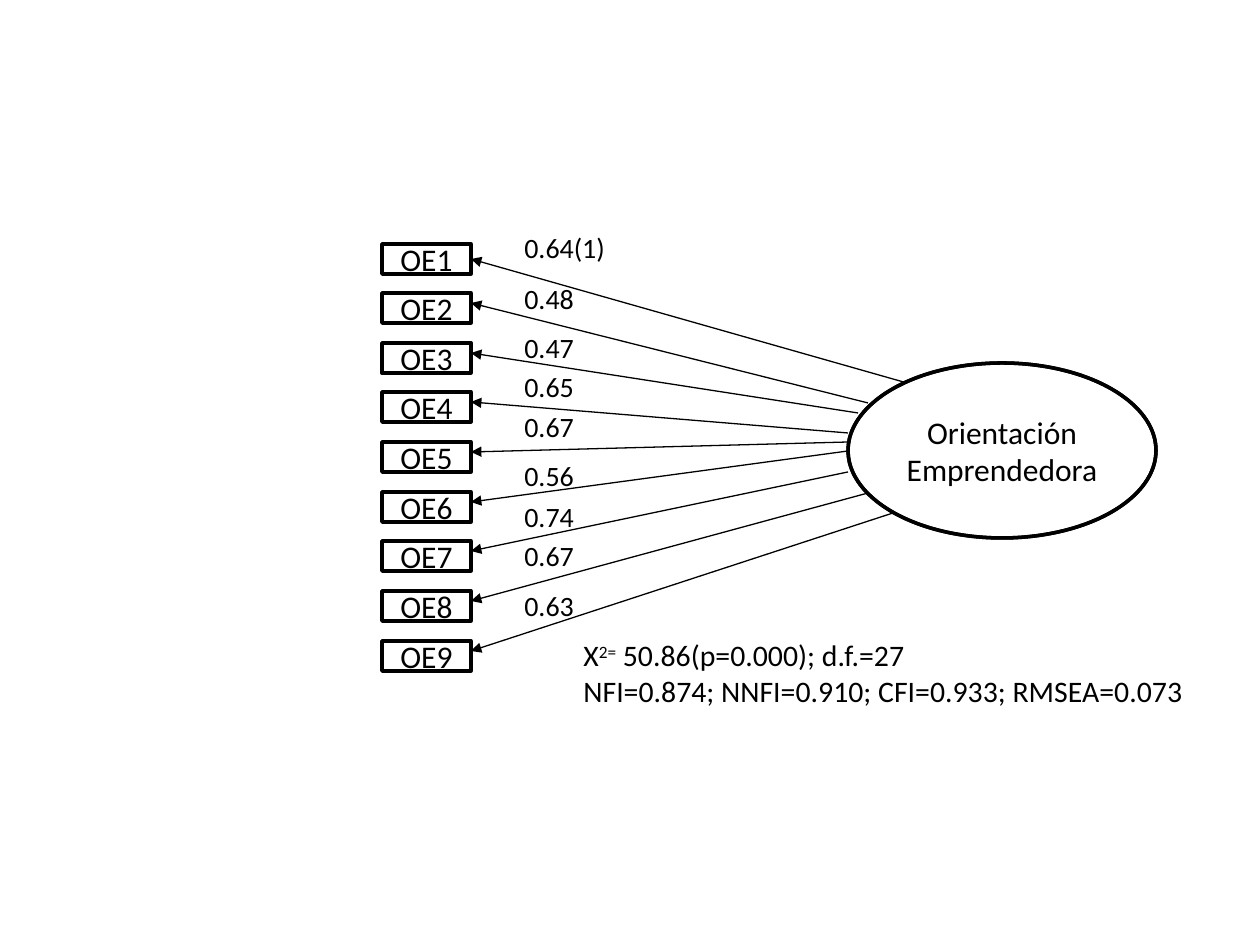
from lxml import etree
from pptx import Presentation
from pptx.dml.color import RGBColor
from pptx.enum.shapes import MSO_CONNECTOR, MSO_SHAPE
from pptx.enum.text import MSO_ANCHOR, MSO_AUTO_SIZE, PP_ALIGN
from pptx.oxml.ns import qn
from pptx.util import Emu, Pt

RECT, DONUT = MSO_SHAPE.RECTANGLE, MSO_SHAPE.DONUT
LINE = MSO_CONNECTOR.STRAIGHT
TOP, MIDDLE = MSO_ANCHOR.TOP, MSO_ANCHOR.MIDDLE
LEFT, CENTER = PP_ALIGN.LEFT, PP_ALIGN.CENTER
GROW = MSO_AUTO_SIZE.SHAPE_TO_FIT_TEXT
PX = 914400 / 126
BLACK, WHITE = "000000", "FFFFFF"


def hue(code):
    return RGBColor.from_string(code)


def write(text, box, kind=None, size=18, align=LEFT, anchor=TOP):
    """Add a text box or a filled shape; '^' marks off superscript parts."""
    area = [Emu(round(v * PX)) for v in box]
    if kind is None:
        shape = slide.shapes.add_textbox(*area)
        shape.text_frame.auto_size = GROW
    else:
        shape = slide.shapes.add_shape(kind, *area)
        shape.shadow.inherit = False
        shape.fill.solid()
        shape.fill.fore_color.rgb = hue(WHITE)
        shape.line.color.rgb = hue(BLACK)
        shape.line.width = Pt(2)
    frame = shape.text_frame
    frame.word_wrap = True
    frame.vertical_anchor = anchor
    for i, row in enumerate(text.split("\n")):
        para = frame.add_paragraph() if i else frame.paragraphs[0]
        para.alignment = align
        for j, part in enumerate(row.split("^")):
            run = para.add_run()
            run.text = part
            run.font.name = "Calibri"
            run.font.size = Pt(size)
            run.font.color.rgb = hue(BLACK)
            if j % 2:
                run.font._element.set("baseline", "30000")
    return shape


deck = Presentation()
deck.slide_width = Emu(round(1260 * PX))
deck.slide_height = Emu(round(945 * PX))
slide = deck.slides.add_slide(deck.slide_layouts[6])

# Latent factor
factor = write("Orientación Emprendedora", (848, 363, 308, 175), DONUT,
               align=CENTER, anchor=MIDDLE)
factor.adjustments[0] = 0

# Indicators: loading, label top, arrow start on the factor
items = [
    ("0.64(1)", 224, 907, 383),
    ("0.48", 275, 868, 403),
    ("0.47", 324, 858, 413),
    ("0.65", 363, 848, 433),
    ("0.67", 403, 848, 442),
    ("0.56", 452, 848, 451),
    ("0.74", 493, 848, 472),
    ("0.67", 532, 868, 493),
    ("0.63", 582, 893, 513),
]
for i, (load, top, x, y) in enumerate(items):
    row = 244 + i * 397 // 8
    item = write(f"OE{i + 1}", (382, row, 89, 30), RECT,
                 align=CENTER, anchor=MIDDLE)

    # Arrow from factor to indicator; only the first meets the side's middle
    ends = [Emu(round(v * PX)) for v in (x, y, 471, row + 10)]
    arrow = slide.shapes.add_connector(LINE, *ends)
    if i == 0:
        arrow.end_connect(item, 3)
    arrow.line.color.rgb = hue(BLACK)
    arrow.line.width = Pt(0.75)
    tail = etree.SubElement(arrow.line._get_or_add_ln(), qn("a:tailEnd"))
    tail.set("type", "triangle")
    etree.SubElement(arrow._element.spPr, qn("a:effectLst"))

    write(load, (512, top, 129, 47), size=16)

# Fit statistics
write("Χ^2=^ 50.86(p=0.000); d.f.=27\n"
      "NFI=0.874; NNFI=0.910; CFI=0.933; RMSEA=0.073",
      (571, 631, 645, 84), size=17)

deck.save("out.pptx")
